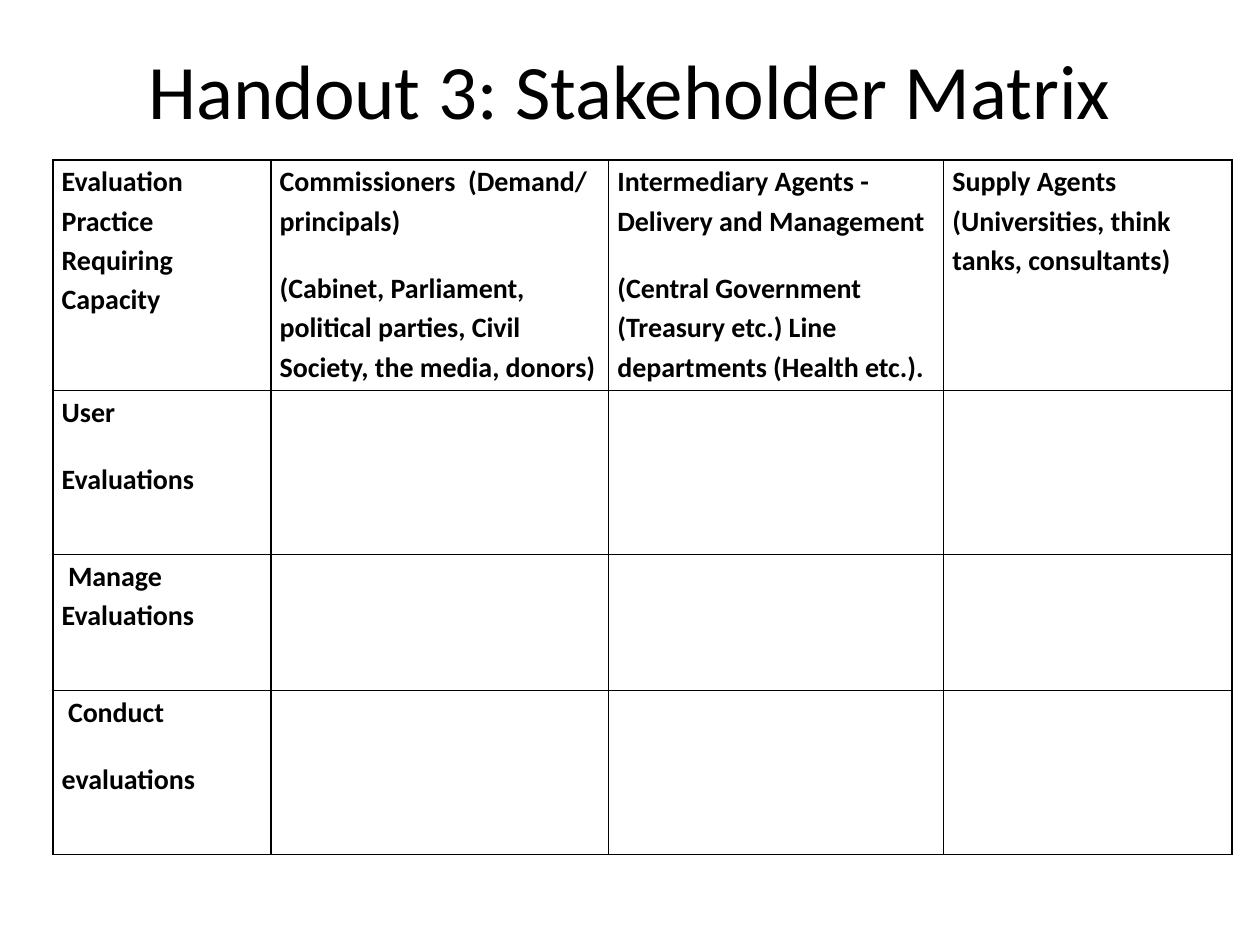
import pptx
import pptx.dml.color
import pptx.enum.text
import pptx.oxml
import pptx.oxml.ns
import pptx.util
from pptx.util import Inches

BLACK = "000000"
COLUMN_WIDTHS = [1.73, 2.68, 2.66, 2.29]
ROW_HEIGHTS = [1.83, 1.3, 1.08, 1.3]

# Each cell is a list of paragraphs.
HEADINGS = [
    ["Evaluation Practice Requiring Capacity"],
    ["Commissioners  (Demand/ principals)",
     "(Cabinet, Parliament, political parties, Civil Society, the media, donors)"],
    ["Intermediary Agents - Delivery and Management",
     "(Central Government (Treasury etc.) Line departments (Health etc.)."],
    ["Supply Agents (Universities, think tanks, consultants)"],
]
PRACTICES = [
    ["User", "Evaluations"],
    [" Manage Evaluations"],
    [" Conduct", "evaluations"],
]
MATRIX = [HEADINGS] + [[practice, [], [], []] for practice in PRACTICES]


def color(hex_value):
    return pptx.dml.color.RGBColor.from_string(hex_value)


def apply(target, values):
    for name, value in values.items():
        setattr(target, name, value)


class HandoutSlide:
    font_name = "Calibri"
    paragraph_format = {
        "line_spacing": 1.15,
        "space_before": pptx.util.Pt(6),
        "space_after": pptx.util.Pt(10),
    }
    cell_format = {
        "margin_left": Inches(0.07),
        "margin_right": Inches(0.07),
        "margin_top": 0,
        "margin_bottom": 0,
        "vertical_anchor": pptx.enum.text.MSO_ANCHOR.TOP,
    }

    def __init__(self, presentation):
        self.slide = presentation.slides.add_slide(presentation.slide_layouts[5])

    def style_font(self, font, size, bold=False):
        apply(font, {"name": self.font_name, "size": pptx.util.Pt(size), "bold": bold})
        font.color.rgb = color(BLACK)

    def title(self, wording, left, top, width, height):
        heading = self.slide.shapes.title
        apply(heading, {"left": Inches(left), "top": Inches(top),
                        "width": Inches(width), "height": Inches(height)})
        frame = heading.text_frame
        frame.text = wording
        frame.vertical_anchor = pptx.enum.text.MSO_ANCHOR.MIDDLE
        frame.paragraphs[0].alignment = pptx.enum.text.PP_ALIGN.CENTER
        self.style_font(frame.paragraphs[0].runs[0].font, 44)

    def table(self, rows, left, top, widths, heights):
        matrix = self.slide.shapes.add_table(
            len(heights), len(widths), Inches(left), Inches(top),
            Inches(sum(widths)), Inches(sum(heights))).table
        apply(matrix, {"first_row": False, "horz_banding": False})
        for column, width in zip(matrix.columns, widths):
            column.width = Inches(width)
        for row, height, contents in zip(matrix.rows, heights, rows):
            row.height = Inches(height)
            for cell, paragraphs in zip(row.cells, contents):
                self.fill_cell(cell, paragraphs)

    def fill_cell(self, cell, paragraphs):
        apply(cell, self.cell_format)
        cell.fill.background()
        self.border(cell)
        if not paragraphs:
            return
        cell.text = "\n".join(paragraphs)
        for paragraph in cell.text_frame.paragraphs:
            apply(paragraph, self.paragraph_format)
            self.style_font(paragraph.runs[0].font, 16, bold=True)

    def border(self, cell, width=1):
        properties = cell._tc.get_or_add_tcPr()
        for position, side in enumerate("LRTB"):
            properties.insert(position, pptx.oxml.parse_xml(
                f'<a:ln{side} {pptx.oxml.ns.nsdecls("a")} w="{pptx.util.Pt(width)}">'
                f'<a:solidFill><a:srgbClr val="{BLACK}"/></a:solidFill></a:ln{side}>'))


def main():
    presentation = pptx.Presentation()
    apply(presentation, {"slide_width": Inches(10), "slide_height": Inches(7.5)})
    handout = HandoutSlide(presentation)
    handout.title("Handout 3: Stakeholder Matrix", 0.5, 0.08, 9, 1.25)
    handout.table(MATRIX, 0.42, 1.27, COLUMN_WIDTHS, ROW_HEIGHTS)
    presentation.save("out.pptx")


if __name__ == "__main__":
    main()
